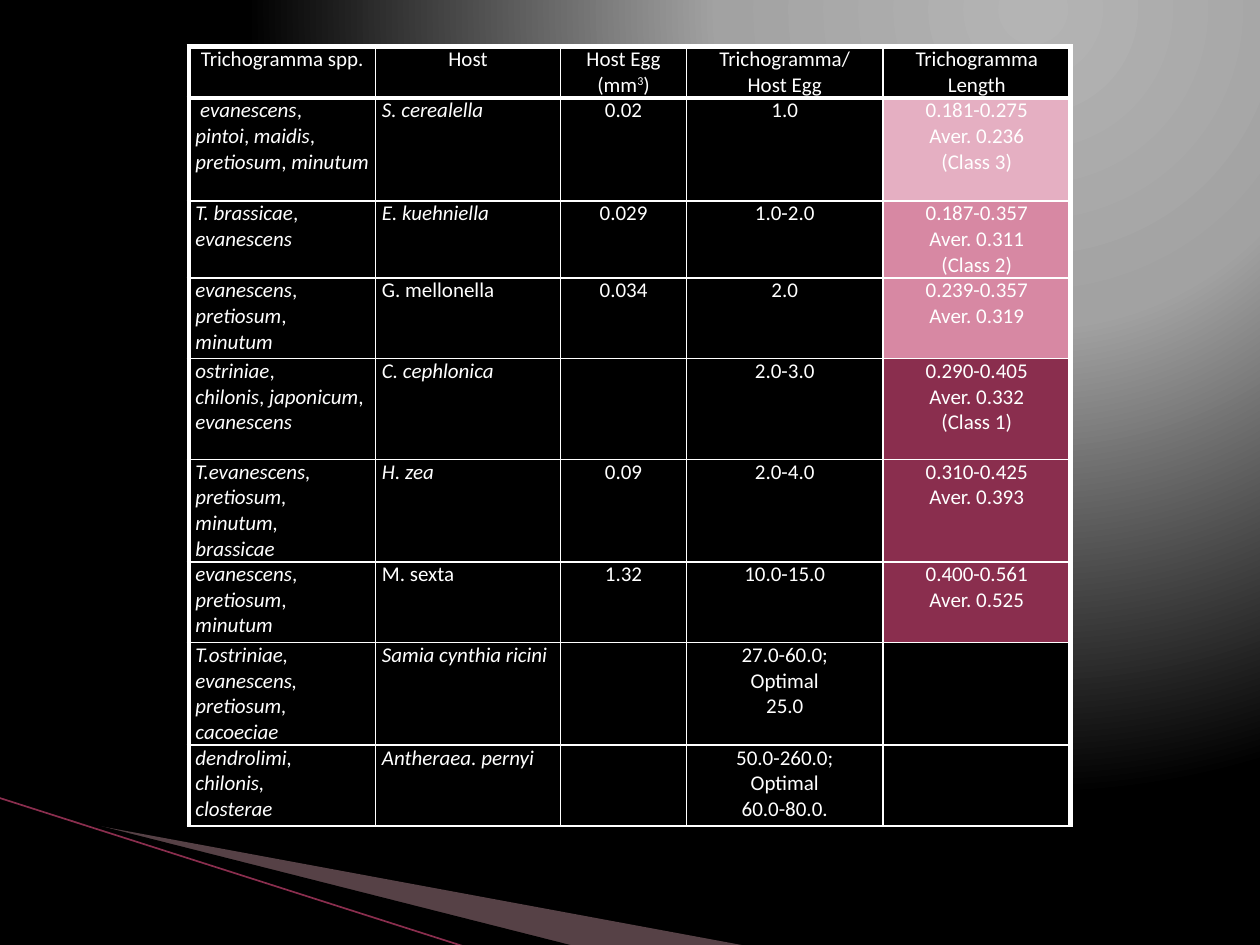
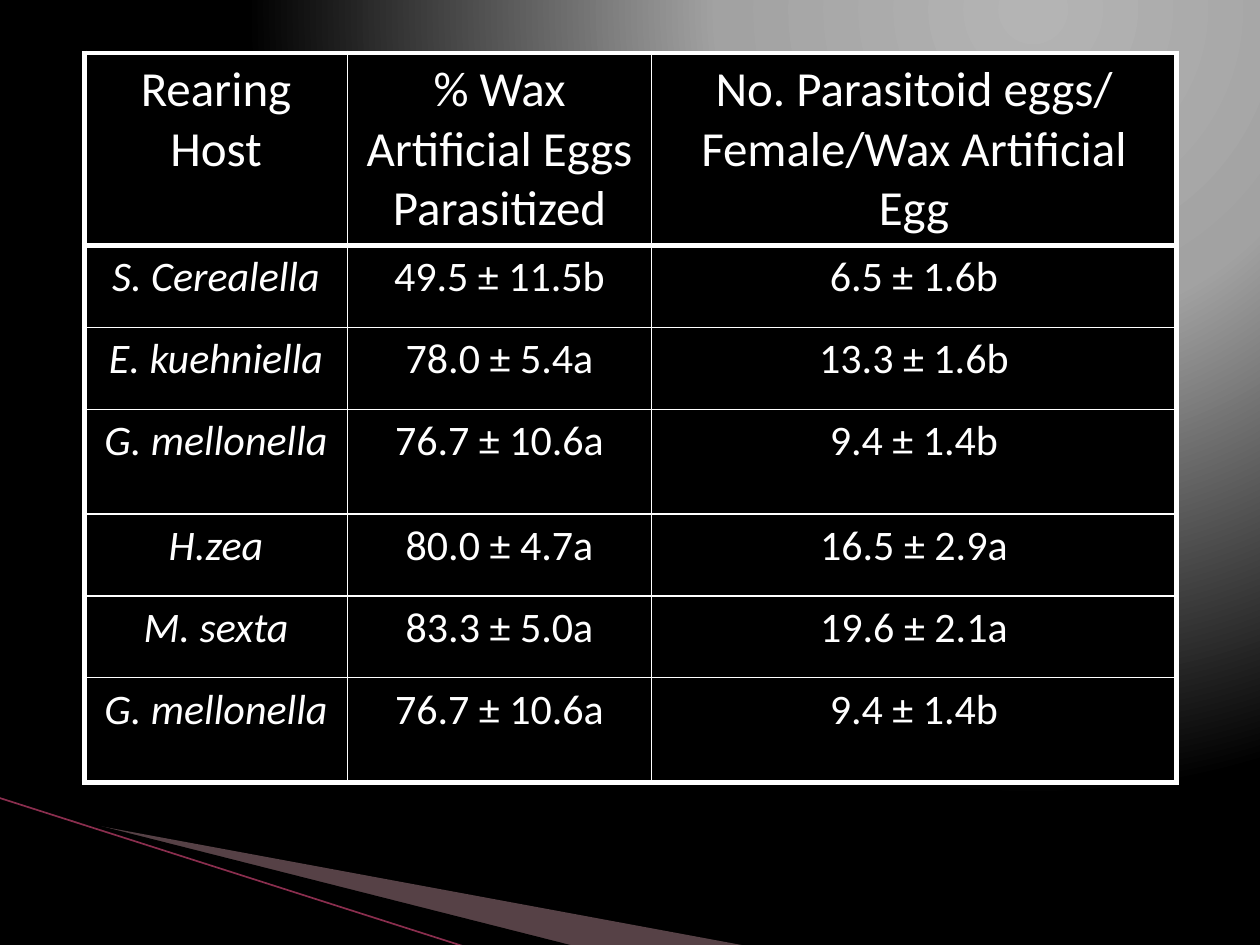
from lxml import etree
from pptx import Presentation
from pptx import util as u
from pptx.dml.color import RGBColor
from pptx.enum import shapes, text
from pptx.oxml import parse_xml
from pptx.oxml.ns import nsdecls, qn

FONT = "Calibri"
COLORS = {
    "black": "000000", "white": "FFFFFF",
    "glow": "B4B4B4", "haze": "A2A2A2",
    "ray": "D8A3AF", "ray_edge": "8A2E4E",
    "class3": "E5AFC2", "class2": "D788A3", "class1": "8A2E4E",
}


def rgb(name):
    return RGBColor.from_string(COLORS[name])


def fill_cell(cell, lines, size, align, fill, borders):
    """Write lines (*italic*, ^superscript^) and set fill and border widths L, R, T, B."""
    cell.fill.solid()
    cell.fill.fore_color.rgb = rgb(fill)
    for place, (side, width) in enumerate(zip("LRTB", borders)):
        cell._tc.tcPr.insert(place, parse_xml(
            f'<a:ln{side} {nsdecls("a")} w="{u.Pt(width)}"><a:solidFill>'
            f'<a:srgbClr val="{COLORS["white"]}"/></a:solidFill></a:ln{side}>'))
    for number, line in enumerate(lines.split("\n") if lines else []):
        frame = cell.text_frame
        paragraph = frame.add_paragraph() if number else frame.paragraphs[0]
        paragraph.alignment = align
        for i, piece in enumerate(line.split("*")):
            for j, words in enumerate(piece.split("^")):
                if not words:
                    continue
                run = paragraph.add_run()
                run.text = words
                run.font.name = FONT
                run.font.size = u.Pt(size)
                run.font.italic = i % 2 == 1
                run.font.color.rgb = rgb("white")
                if j % 2:
                    run.font._element.set("baseline", "30000")


prs = Presentation()
prs.slide_width, prs.slide_height = u.Cm(25.4), u.Cm(19.05)
master = prs.slide_master
blank = prs.slide_layouts[6]
host_slide, wax_slide = [prs.slides.add_slide(blank) for _ in range(2)]

# Shared background: glow in the upper right corner
master.background.fill.solid()
backdrop = master.element.find(".//" + qn("p:bgPr"))
stops = "".join(f'<a:gs pos="{pos}000"><a:srgbClr val="{COLORS[name]}"/></a:gs>'
                for pos, name in [(0, "glow"), (40, "haze"), (100, "black")])
backdrop.replace(backdrop[0], parse_xml(
    f'<a:gradFill {nsdecls("a")} rotWithShape="1"><a:gsLst>{stops}</a:gsLst>'
    '<a:path path="circle"><a:fillToRect l="65000" b="98000"/></a:path></a:gradFill>'))

# Shared rays in the lower left corner, moved to the master
rays = [
    ("ray", [(1.4, 16.54), (15.11, 19.08), (11.58, 19.08), (1.4, 16.51)]),
    ("black", [(1.35, 16.48), (11.61, 19.08), (9.45, 19.1), (1.37, 16.51)]),
]
corner = []
for color, points in rays:
    start, *rest = [(u.Cm(x), u.Cm(y)) for x, y in points]
    outline = host_slide.shapes.build_freeform(*start)
    outline.add_line_segments(rest, close=True)
    ray = outline.convert_to_shape()
    ray.shadow.inherit = False
    ray.fill.solid()
    ray.fill.fore_color.rgb = rgb(color)
    ray.line.fill.background()
    corner.append(ray)
tint = corner[0]._element.spPr.find(".//" + qn("a:srgbClr"))
etree.SubElement(tint, qn("a:alpha")).set("val", "40000")

ray_edge = host_slide.shapes.add_connector(
    shapes.MSO_CONNECTOR.STRAIGHT, u.Cm(-0.03), u.Cm(16.08), u.Cm(9.42), u.Cm(19.1))
ray_edge.line.color.rgb = rgb("ray_edge")
ray_edge.line.width = u.Pt(0.95)
etree.SubElement(ray_edge._element.spPr, qn("a:effectLst"))
corner.append(ray_edge)
for number, part in enumerate(corner):
    part._element.find(".//" + qn("p:cNvPr")).set("id", str(20 + number))
    master.shapes._spTree.append(part._element)

# Content of the two tables
host_rows = [
    ["Trichogramma spp.", "Host", "Host Egg (mm^3^)", "Trichogramma/\nHost Egg",
     "Trichogramma Length"],
    ["* evanescens*,\n*pintoi*, *maidis*, *pretiosum*, *minutum*", "*S. cerealella*",
     "0.02", "1.0", "0.181-0.275\nAver. 0.236\n(Class 3)"],
    ["*T. brassicae*,\n*evanescens*", "*E. kuehniella*",
     "0.029", "1.0-2.0", "0.187-0.357\nAver. 0.311\n(Class 2)"],
    ["*evanescens*, *pretiosum*,\n*minutum*", "G. mellonella",
     "0.034", "2.0", "0.239-0.357\nAver. 0.319"],
    ["*ostriniae*,\n*chilonis*, *japonicum*, *evanescens*", "*C. cephlonica*",
     "", "2.0-3.0", "0.290-0.405\nAver. 0.332\n(Class 1)"],
    ["*T.evanescens,*\n*pretiosum,*\n*minutum,*\n*brassicae*", "*H. zea*",
     "0.09", "2.0-4.0", "0.310-0.425\nAver. 0.393"],
    ["*evanescens*, *pretiosum*,\n*minutum*", "M. sexta",
     "1.32", "10.0-15.0", "0.400-0.561\nAver. 0.525"],
    ["*T.ostriniae,*\n*evanescens,*\n*pretiosum,*\n*cacoeciae*", "*Samia cynthia ricini*",
     "", "27.0-60.0;\nOptimal\n25.0", ""],
    ["*dendrolimi,*\n*chilonis,*\n*closterae*", "*Antheraea. pernyi*",
     "", "50.0-260.0;\nOptimal\n60.0-80.0.", ""],
]
length_fills = {1: "class3", 2: "class2", 3: "class2",
                4: "class1", 5: "class1", 6: "class1"}
wax_rows = [
    ["Rearing Host", "% Wax Artificial Eggs Parasitized",
     "No. Parasitoid eggs/ Female/Wax Artificial Egg"],
    ["*S. Cerealella*", "49.5 ± 11.5b", "6.5 ± 1.6b"],
    ["*E. kuehniella*", "78.0 ± 5.4a", "13.3 ± 1.6b"],
    ["*G. mellonella*", "76.7 ± 10.6a", "9.4 ± 1.4b"],
    ["*H.zea*", "80.0 ± 4.7a", "16.5 ± 2.9a"],
    ["*M. sexta*", "83.3 ± 5.0a", "19.6 ± 2.1a"],
    ["*G. mellonella*", "76.7 ± 10.6a", "9.4 ± 1.4b"],
]
studies = [
    dict(slide=host_slide, rows=host_rows, at=(3.81, 0.94), sizes=(12, 12),
         widths=[3.76, 3.73, 2.54, 3.96, 3.78],
         heights=[0.99, 2.08, 1.02, 1.63, 2.03, 2.03, 1.63, 2.03, 1.63],
         left_columns=2, insets=(0.13, 0), fills=length_fills, bottom=1),
    dict(slide=wax_slide, rows=wax_rows, at=(1.7, 1.07), sizes=(28, 24),
         widths=[5.31, 6.12, 10.59],
         heights=[3.73, 1.65, 1.65, 2.11, 1.65, 1.65, 2.11],
         left_columns=0, insets=(0.25, 0.13), fills={}, bottom=3),
]

# Tables: thick frame and header rule, thin inner lines
for study in studies:
    rows, widths, heights = study["rows"], study["widths"], study["heights"]
    left, top = study["at"]
    table = study["slide"].shapes.add_table(
        len(rows), len(widths), u.Cm(left), u.Cm(top),
        u.Cm(sum(widths)), u.Cm(sum(heights))).table
    table.first_row = table.horz_banding = False
    for column, width in zip(table.columns, widths):
        column.width = u.Cm(width)
    last_row, last_col = len(rows) - 1, len(widths) - 1
    for r, row in enumerate(rows):
        table.rows[r].height = u.Cm(heights[r])
        for c, lines in enumerate(row):
            cell = table.cell(r, c)
            side, end = study["insets"]
            cell.margin_left = cell.margin_right = u.Cm(side)
            cell.margin_top = cell.margin_bottom = u.Cm(end)
            ragged = r > 0 and c < study["left_columns"]
            align = text.PP_ALIGN.LEFT if ragged else text.PP_ALIGN.CENTER
            fill = study["fills"].get(r, "black") if c == last_col else "black"
            under = 3 if r == 0 else study["bottom"] if r == last_row else 1
            borders = (3 if c == 0 else 1, 3 if c == last_col else 1,
                       3 if r < 2 else 1, under)
            fill_cell(cell, lines, study["sizes"][r > 0], align, fill, borders)

prs.save("out.pptx")
